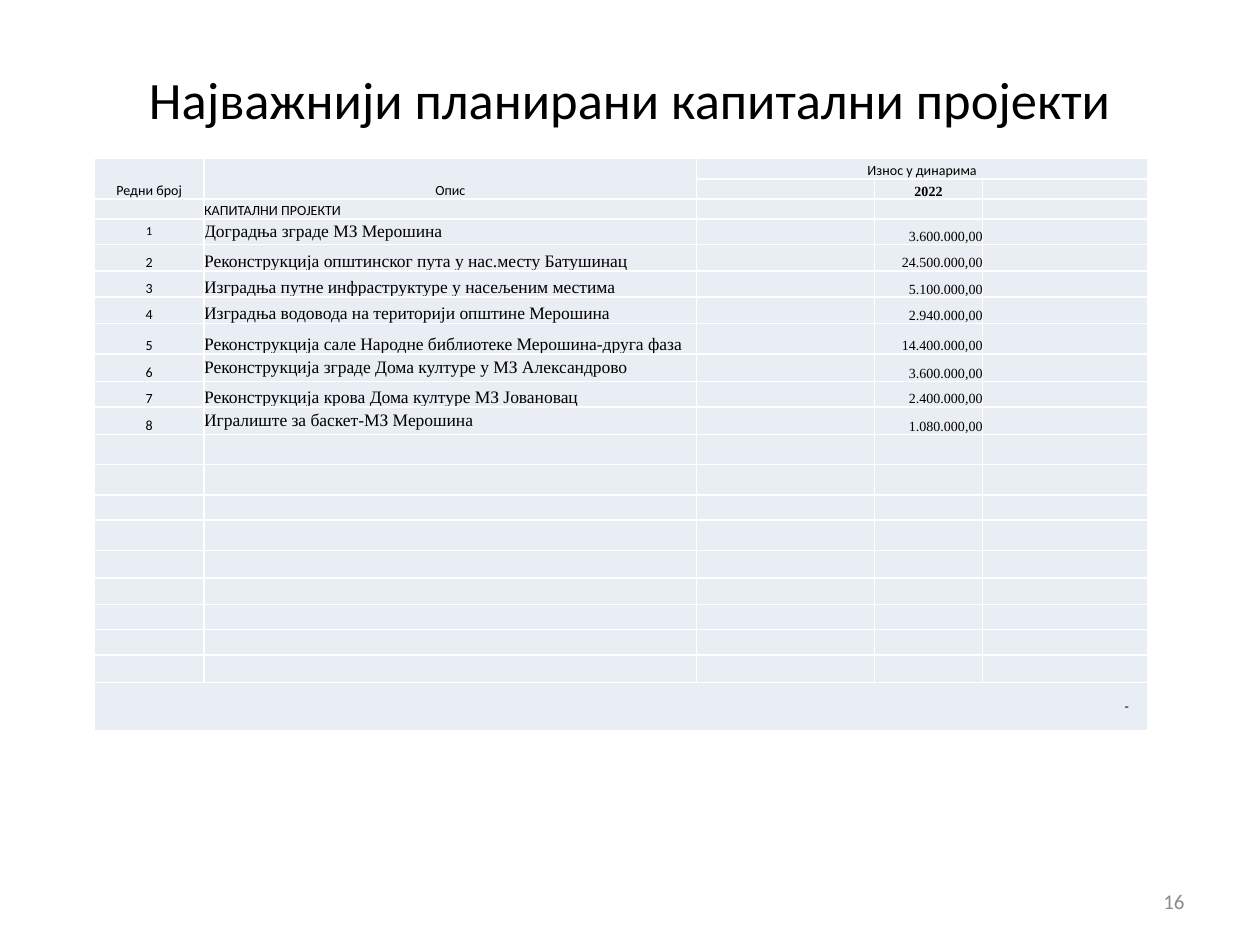
from dataclasses import dataclass

from lxml import etree
from pptx import Presentation
from pptx import util as u
from pptx.dml.color import RGBColor
from pptx.enum import text
from pptx.oxml import ns

ALIGN = text.PP_ALIGN
ANCHOR = text.MSO_ANCHOR


@dataclass(frozen=True)
class Theme:
    sans: str = "Calibri"
    serif: str = "Times New Roman"
    ink: str = "000000"
    muted: str = "8C8C8C"
    cell_fill: str = "E9EDF4"
    border: str = "FFFFFF"
    border_width: float = 1
    title_size: float = 30
    number_size: float = 12
    item_size: float = 10
    small_size: float = 8
    tiny_size: float = 7


@dataclass(frozen=True)
class Style:
    font: str
    size: float
    align: ALIGN
    anchor: ANCHOR = ANCHOR.BOTTOM
    bold: bool = False
    color: str = Theme.ink


@dataclass(frozen=True)
class Project:
    name: str
    amount: str
    name_anchor: ANCHOR = ANCHOR.BOTTOM


THEME = Theme()
TITLE = Style(THEME.sans, THEME.title_size, ALIGN.CENTER, ANCHOR.MIDDLE)
PAGE_NUMBER = Style(THEME.sans, THEME.number_size, ALIGN.RIGHT, ANCHOR.MIDDLE,
                    color=THEME.muted)
HEADER = Style(THEME.sans, THEME.small_size, ALIGN.CENTER)
YEAR = Style(THEME.serif, THEME.small_size, ALIGN.CENTER, bold=True)
SECTION = Style(THEME.sans, THEME.small_size, ALIGN.LEFT)
FIRST_INDEX = Style(THEME.sans, THEME.tiny_size, ALIGN.CENTER, ANCHOR.MIDDLE)
AMOUNT = Style(THEME.serif, THEME.small_size, ALIGN.RIGHT)
TOTAL = Style(THEME.sans, THEME.small_size, ALIGN.RIGHT, ANCHOR.MIDDLE)

COLUMN_WIDTHS = [0.87, 3.91, 1.41, 0.86, 1.31]
ROW_HEIGHTS = [0.16, 0.16, 0.16, 0.2, 0.21, 0.21, 0.21, 0.24, 0.22, 0.2, 0.22,
               0.24, 0.24, 0.2, 0.24, 0.22, 0.21, 0.2, 0.2, 0.22, 0.38]
FIRST_PROJECT_ROW = 3
PROJECTS = [
    Project("Доградња зграде МЗ Мерошина", "3.600.000,00", ANCHOR.MIDDLE),
    Project("Реконструкција општинског пута у нас.месту Батушинац", "24.500.000,00"),
    Project("Изградња путне инфраструктуре у насељеним местима", "5.100.000,00"),
    Project("Изградња водовода на територији општине Мерошина", "2.940.000,00"),
    Project("Реконструкција сале Народне библиотеке Мерошина-друга фаза",
            "14.400.000,00"),
    Project("Реконструкција зграде Дома културе у МЗ Александрово", "3.600.000,00",
            ANCHOR.MIDDLE),
    Project("Реконструкција крова Дома културе МЗ Јовановац", "2.400.000,00"),
    Project("Игралиште за баскет-МЗ Мерошина", "1.080.000,00", ANCHOR.MIDDLE),
]


def write(frame, words: str, style: Style) -> None:
    """Put one styled line into a text frame."""
    para = frame.paragraphs[0]
    para.alignment = style.align
    span = para.add_run()
    span.text = words
    formats = {"name": style.font, "size": u.Pt(style.size), "bold": style.bold}
    for name, value in formats.items():
        setattr(span.font, name, value)
    span.font.color.rgb = RGBColor.from_string(style.color)


def write_cell(cell, words: str, style: Style) -> None:
    cell.vertical_anchor = style.anchor
    write(cell.text_frame, words, style)


def prepare_cell(cell) -> None:
    """Give a cell its borders, fill, zero margins and small empty line."""
    for side in ("left", "right", "top", "bottom"):
        setattr(cell, f"margin_{side}", 0)
    properties = cell._tc.get_or_add_tcPr()
    for edge in ("a:lnL", "a:lnR", "a:lnT", "a:lnB"):
        line = etree.SubElement(properties, ns.qn(edge),
                                w=str(u.Pt(THEME.border_width)))
        fill = etree.SubElement(line, ns.qn("a:solidFill"))
        etree.SubElement(fill, ns.qn("a:srgbClr"), val=THEME.border)
    cell.fill.solid()
    cell.fill.fore_color.rgb = RGBColor.from_string(THEME.cell_fill)
    etree.SubElement(cell.text_frame.paragraphs[0]._p, ns.qn("a:endParaRPr"),
                     sz=str(int(THEME.small_size * 100)))


def add_project_table(page) -> None:
    table = page.shapes.add_table(
        len(ROW_HEIGHTS), len(COLUMN_WIDTHS), u.Inches(0.75), u.Inches(1.26),
        u.Inches(sum(COLUMN_WIDTHS)), u.Inches(sum(ROW_HEIGHTS))).table
    table.first_row = table.horz_banding = False
    for column, width in zip(table.columns, COLUMN_WIDTHS):
        column.width = u.Inches(width)
    for row, height in zip(table.rows, ROW_HEIGHTS):
        row.height = u.Inches(height)
    for cell in table.iter_cells():
        prepare_cell(cell)

    # Merged areas
    last_row, last_column = len(ROW_HEIGHTS) - 1, len(COLUMN_WIDTHS) - 1
    for start, end in [((0, 0), (1, 0)), ((0, 1), (1, 1)),
                       ((0, 2), (0, last_column)),
                       ((last_row, 0), (last_row, last_column))]:
        table.cell(*start).merge(table.cell(*end))

    # Headings
    for column, heading in enumerate(["Редни број", "Опис", "Износ у динарима"]):
        write_cell(table.cell(0, column), heading, HEADER)
    write_cell(table.cell(1, 3), "2022", YEAR)
    write_cell(table.cell(2, 1), "КАПИТАЛНИ ПРОЈЕКТИ", SECTION)

    # Projects
    for index, project in enumerate(PROJECTS, start=1):
        row = FIRST_PROJECT_ROW + index - 1
        name_style = Style(THEME.serif, THEME.item_size, ALIGN.LEFT,
                           project.name_anchor)
        write_cell(table.cell(row, 0), str(index),
                   FIRST_INDEX if index == 1 else HEADER)
        write_cell(table.cell(row, 1), project.name, name_style)
        write_cell(table.cell(row, 3), project.amount, AMOUNT)

    # Total
    total = table.cell(last_row, 0)
    total.margin_right = u.Inches(0.15)
    write_cell(total, "-", TOTAL)


def place_title(page) -> None:
    title = page.shapes.title
    box = {"left": 0.5, "top": 0.3, "width": 9, "height": 0.96}
    for name, value in box.items():
        setattr(title, name, u.Inches(value))
    title.text_frame.vertical_anchor = TITLE.anchor
    write(title.text_frame, "Најважнији планирани капитални пројекти", TITLE)


def add_page_number(page) -> None:
    box = page.shapes.add_textbox(u.Inches(7.17), u.Inches(6.95),
                                  u.Inches(2.33), u.Inches(0.4))
    box.text_frame.word_wrap = True
    box.text_frame.vertical_anchor = PAGE_NUMBER.anchor
    write(box.text_frame, "16", PAGE_NUMBER)


def main() -> None:
    deck = Presentation()
    deck.slide_width, deck.slide_height = u.Inches(10), u.Inches(7.5)
    page = deck.slides.add_slide(deck.slide_layouts.get_by_name("Title Only"))
    add_page_number(page)
    place_title(page)
    add_project_table(page)
    deck.save("out.pptx")


if __name__ == "__main__":
    main()
